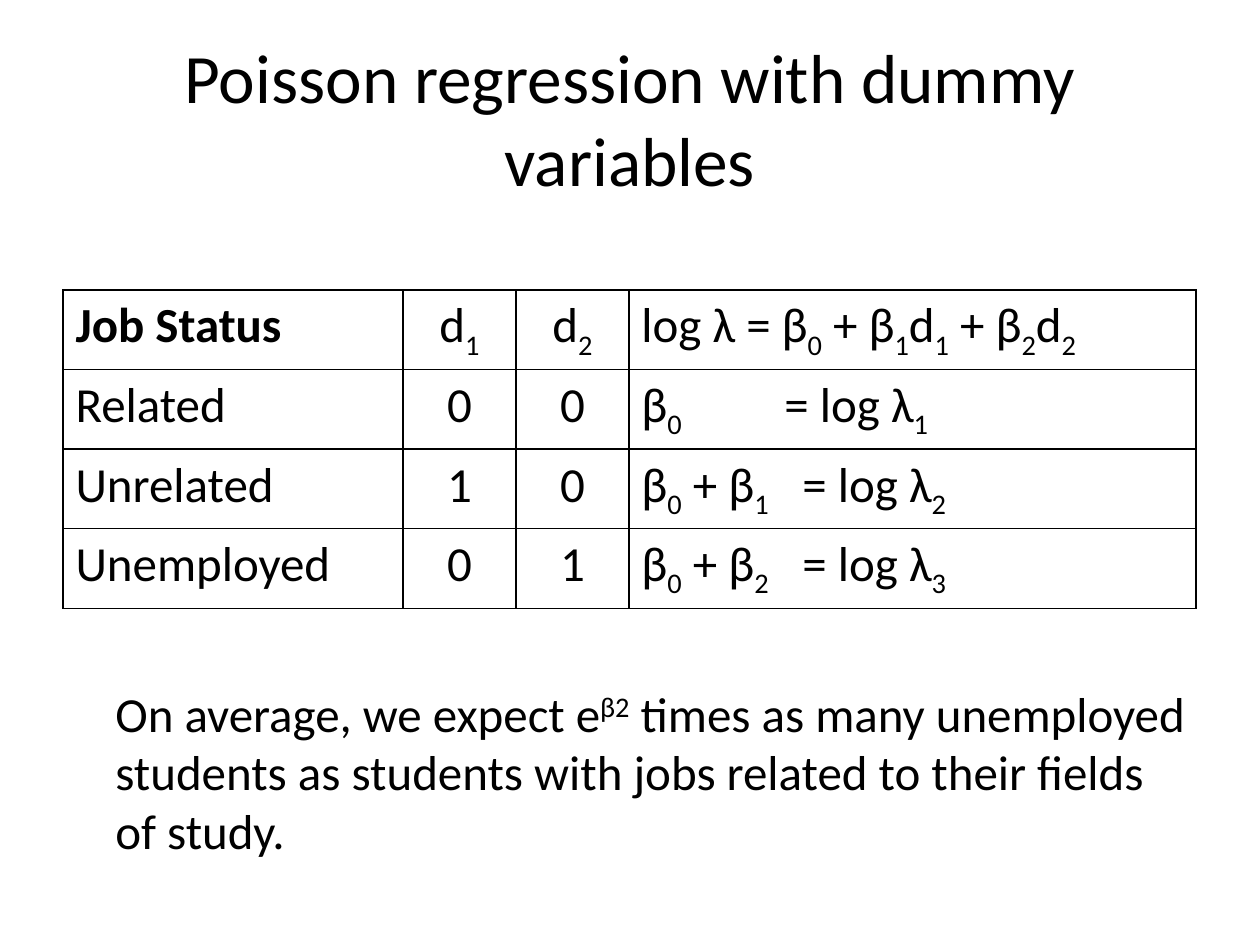
from pptx import Presentation
from pptx.dml.color import RGBColor
from pptx.enum.text import MSO_ANCHOR as Anchor, PP_ALIGN as Align
from pptx.oxml import parse_xml
from pptx.oxml.ns import nsdecls
from pptx.util import Emu, Pt

BLACK = RGBColor(0, 0, 0)
SCALE = 914400 / 126
ROW = 79
WIDTHS = [340, 113, 113, 567]
TABS = {1: 143, 2: 161, 3: 161}
ROWS = [
    ["Job Status", "d|1|", "d|2|", "log λ = β|0| + β|1|d|1| + β|2|d|2|"],
    ["Related", "0", "0", "β|0|\t= log λ|1|"],
    ["Unrelated", "1", "0", "β|0| + β|1|\t= log λ|2|"],
    ["Unemployed", "0", "1", "β|0| + β|2|\t= log λ|3|"],
]
NOTE = [
    "On average, we expect e|β2| times as many unemployed",
    "students as students with jobs related to their fields",
    "of study.",
]


def px(n):
    return Emu(round(n * SCALE))


def write(para, text, size=28, bold=False, shift=-25, align=Align.LEFT):
    para.alignment = align
    look = {"name": "Calibri", "size": Pt(size), "bold": bold}
    for i, part in enumerate(text.split("|")):
        if part:
            run = para.add_run()
            run.text = part
            for key, value in look.items():
                setattr(run.font, key, value)
            run.font.color.rgb = BLACK
            if i % 2:
                run.font._element.set("baseline", str(shift * 1000))


deck = Presentation()
deck.slide_width, deck.slide_height = px(1260), px(945)
slide = deck.slides.add_slide(deck.slide_layouts[6])
shapes = slide.shapes

title = shapes.add_textbox(px(63), px(38), px(1134), px(158)).text_frame
title.word_wrap = True
title.vertical_anchor = Anchor.MIDDLE
write(title.paragraphs[0], "Poisson regression with dummy variables",
      size=39.6, align=Align.CENTER)

table = shapes.add_table(len(ROWS), len(WIDTHS), px(63), px(290),
                         px(sum(WIDTHS)), px(ROW * len(ROWS))).table
table.first_row = table.horz_banding = False
for col, width in zip(table.columns, WIDTHS):
    col.width = px(width)
for r, texts in enumerate(ROWS):
    table.rows[r].height = px(ROW)
    for c, text in enumerate(texts):
        cell = table.cell(r, c)
        para = cell.text_frame.paragraphs[0]
        write(para, text, bold=r == c == 0,
              align=Align.CENTER if c in (1, 2) else Align.LEFT)
        if "\t" in text:
            para._p.get_or_add_pPr().append(parse_xml(
                f'<a:tabLst {nsdecls("a")}>'
                f'<a:tab pos="{px(TABS[r])}" algn="l"/></a:tabLst>'))
        props = cell._tc.get_or_add_tcPr()
        for side in "LRTB":
            props.append(parse_xml(
                f'<a:ln{side} {nsdecls("a")} w="{Pt(1)}"><a:solidFill>'
                f'<a:srgbClr val="{BLACK}"/></a:solidFill></a:ln{side}>'))
        cell.fill.background()

note = shapes.add_textbox(px(103), px(677), px(1129), px(190)).text_frame
note.word_wrap = False
for i, line in enumerate(NOTE):
    para = note.add_paragraph() if i else note.paragraphs[0]
    write(para, line, shift=30)

deck.save("out.pptx")
